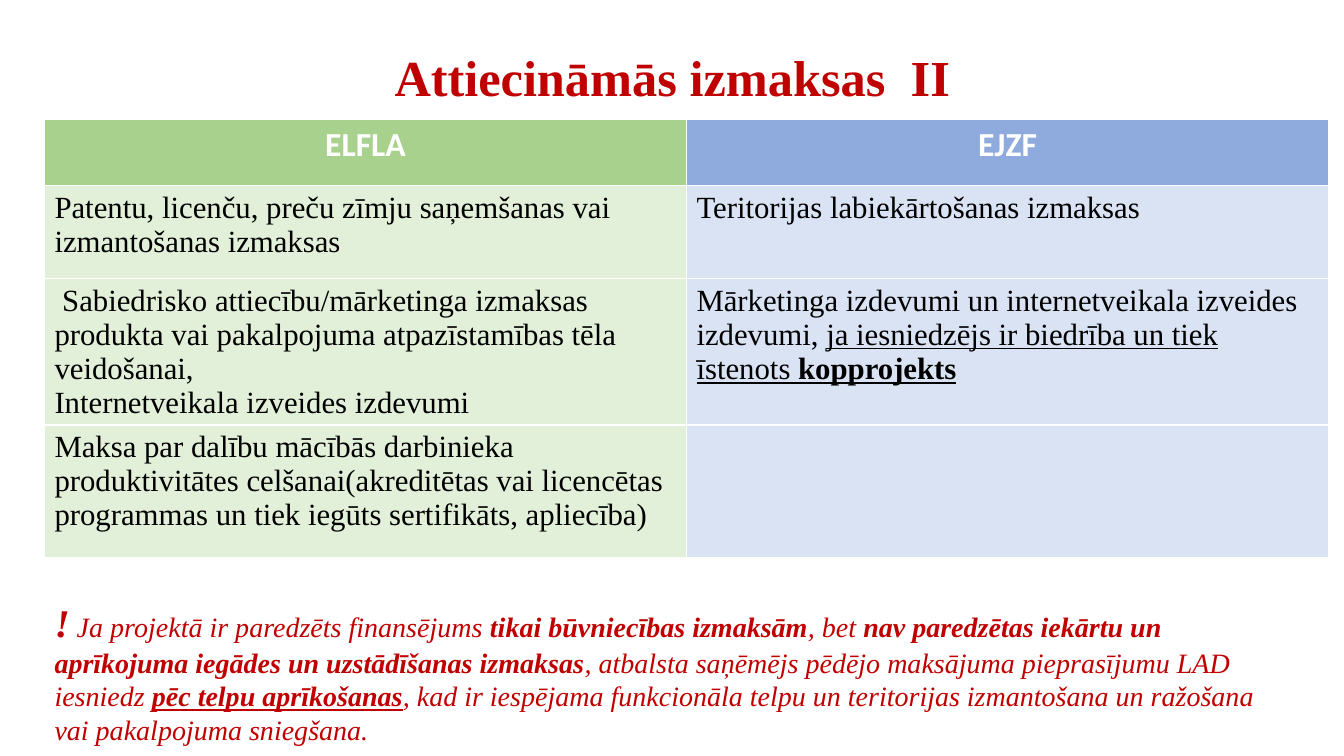
"""Build the slide comparing eligible costs under ELFLA and EJZF."""
from dataclasses import dataclass

from lxml import etree
from pptx import Presentation
from pptx.dml.color import RGBColor
from pptx.enum import text
from pptx.oxml import ns
from pptx.util import Cm, Pt

RED = RGBColor(0xC0, 0x00, 0x00)
WHITE = RGBColor(0xFF, 0xFF, 0xFF)
BLACK = RGBColor(0x00, 0x00, 0x00)
GREEN = RGBColor(0xA9, 0xD1, 0x8E)
PALE_GREEN = RGBColor(0xE2, 0xF0, 0xD9)
BLUE = RGBColor(0x8F, 0xAA, 0xDC)
PALE_BLUE = RGBColor(0xDA, 0xE3, 0xF3)
SERIF = "Times New Roman"


@dataclass(frozen=True)
class Span:
    """A piece of text with its emphasis."""
    words: str
    bold: bool = False
    underline: bool = False


@dataclass(frozen=True)
class Fund:
    """A table column: heading, colours and the paragraphs of each cell."""
    name: str
    head: RGBColor
    pale: RGBColor
    cells: list[list[list[Span]]]


FUNDS = [
    Fund("ELFLA", GREEN, PALE_GREEN, [
        [[Span("Patentu, licenču, preču zīmju saņemšanas vai izmantošanas izmaksas")]],
        [[Span(" Sabiedrisko attiecību/mārketinga izmaksas produkta vai pakalpojuma "
               "atpazīstamības tēla veidošanai,")],
         [Span("Internetveikala izveides izdevumi")]],
        [[Span("Maksa par dalību mācībās darbinieka produktivitātes celšanai(akreditētas "
               "vai licencētas programmas un tiek iegūts sertifikāts, apliecība)")]],
    ]),
    Fund("EJZF", BLUE, PALE_BLUE, [
        [[Span("Teritorijas labiekārtošanas izmaksas")]],
        [[Span("Mārketinga izdevumi un internetveikala izveides izdevumi, "),
          Span("ja iesniedzējs ir biedrība un tiek īstenots ", underline=True),
          Span("kopprojekts", bold=True, underline=True)]],
        [],
    ]),
]
ROW_HEIGHTS = [1.68, 2.34, 3.68, 3.35]
COL_WIDTH = 16.18
NOTE = [
    Span(" Ja projektā ir paredzēts finansējums "),
    Span("tikai būvniecības izmaksām", bold=True),
    Span(", bet "),
    Span("nav paredzētas iekārtu un aprīkojuma iegādes un uzstādīšanas izmaksas", bold=True),
    Span(", atbalsta saņēmējs pēdējo maksājuma pieprasījumu LAD iesniedz "),
    Span("pēc telpu aprīkošanas", bold=True, underline=True),
    Span(", kad ir iespējama funkcionāla telpu un teritorijas izmantošana un ražošana "
         "vai pakalpojuma sniegšana."),
]


def add_text(p, words: str, *, size: float, color: RGBColor, font: str = SERIF,
             bold: bool = False, italic: bool = False, underline: bool = False) -> None:
    """Append a formatted run to a paragraph."""
    r = p.add_run()
    r.text = words
    f = r.font
    f.name, f.size, f.bold, f.italic, f.underline = font, Pt(size), bold, italic, underline
    f.color.rgb = color


def place(sp, left: float, top: float, width: float, height: float,
          anchor: text.MSO_ANCHOR):
    """Move a placeholder and return its first paragraph."""
    sp.left, sp.top, sp.width, sp.height = Cm(left), Cm(top), Cm(width), Cm(height)
    tf = sp.text_frame
    tf.word_wrap = True
    tf.auto_size = text.MSO_AUTO_SIZE.NONE
    tf.vertical_anchor = anchor
    return tf.paragraphs[0]


def fill_cell(cell, color: RGBColor) -> None:
    """Give a table cell a solid fill."""
    cell.fill.solid()
    cell.fill.fore_color.rgb = color


def add_title(s) -> None:
    """Write the slide title."""
    p = place(s.shapes.title, 2.34, 1.02, 29.21, 2.01, text.MSO_ANCHOR.MIDDLE)
    p.alignment = text.PP_ALIGN.CENTER
    p.line_spacing = 0.9
    add_text(p, "Attiecināmās izmaksas  II", size=36, color=RED, bold=True)


def add_note(s) -> None:
    """Write the warning below the table."""
    p = place(s.placeholders[1], 1.12, 14.94, 31.5, 4.01, text.MSO_ANCHOR.TOP)
    p.line_spacing = 1.0
    p.space_before = Pt(0)
    props = p._p.get_or_add_pPr()
    props.set("marL", "0")
    props.set("indent", "0")
    etree.SubElement(props, ns.qn("a:buNone"))
    add_text(p, "!", size=28, color=RED, bold=True, italic=True)
    for span in NOTE:
        add_text(p, span.words, size=20, color=RED, italic=True,
                 bold=span.bold, underline=span.underline)


def add_costs(s) -> None:
    """Draw the table with one column for each fund."""
    table = s.shapes.add_table(
        len(ROW_HEIGHTS), len(FUNDS), Cm(1.12), Cm(3),
        Cm(COL_WIDTH * len(FUNDS)), Cm(sum(ROW_HEIGHTS))).table
    for row, height in zip(table.rows, ROW_HEIGHTS):
        row.height = Cm(height)
    for col, fund in enumerate(FUNDS):
        table.columns[col].width = Cm(COL_WIDTH)
        head = table.cell(0, col)
        fill_cell(head, fund.head)
        p = head.text_frame.paragraphs[0]
        p.alignment = text.PP_ALIGN.CENTER
        add_text(p, fund.name, size=24, color=WHITE, font="Calibri", bold=True)
        for row, paragraphs in enumerate(fund.cells, start=1):
            cell = table.cell(row, col)
            fill_cell(cell, fund.pale)
            tf = cell.text_frame
            for i, spans in enumerate(paragraphs):
                p = tf.add_paragraph() if i else tf.paragraphs[0]
                for span in spans:
                    add_text(p, span.words, size=22, color=BLACK,
                             bold=span.bold, underline=span.underline)


def main() -> None:
    """Create and save the presentation."""
    prs = Presentation()
    prs.slide_width, prs.slide_height = Cm(33.87), Cm(19.05)
    s = prs.slides.add_slide(prs.slide_layouts[1])
    add_title(s)
    add_note(s)
    add_costs(s)
    prs.save("out.pptx")


if __name__ == "__main__":
    main()
